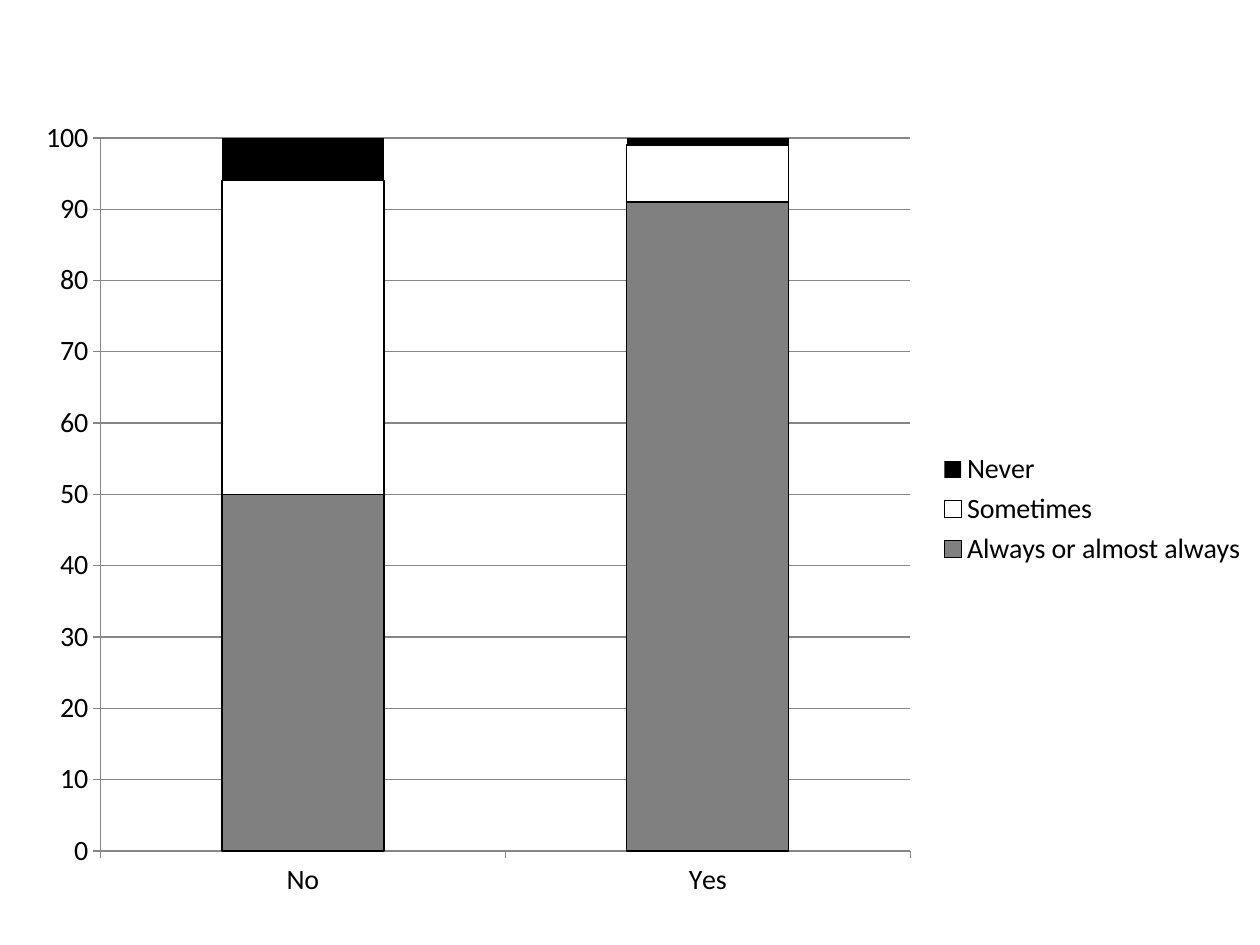
"""Build a slide with a stacked column chart of answer frequencies."""
from dataclasses import dataclass

from pptx import Presentation
from pptx.chart.data import CategoryChartData
from pptx.dml.color import RGBColor
from pptx.enum.chart import XL_CHART_TYPE as ChartType
from pptx.enum.chart import XL_LEGEND_POSITION as LegendPosition
from pptx.enum.chart import XL_TICK_MARK as TickMark
from pptx.util import Cm, Pt


@dataclass(frozen=True)
class Theme:
    font: str = "Calibri"
    text: RGBColor = RGBColor(0x00, 0x00, 0x00)
    grid: RGBColor = RGBColor(0x86, 0x86, 0x86)
    outline: RGBColor = RGBColor(0x00, 0x00, 0x00)
    always: RGBColor = RGBColor(0x80, 0x80, 0x80)
    sometimes: RGBColor = RGBColor(0xFF, 0xFF, 0xFF)
    never: RGBColor = RGBColor(0x00, 0x00, 0x00)
    text_size: Pt = Pt(16)
    line_width: Pt = Pt(0.75)


theme = Theme()
answers = [
    ("Always or almost always", (50, 91), theme.always, True),
    ("Sometimes", (44, 8), theme.sometimes, True),
    ("Never", (6, 1), theme.never, False),
]

presentation = Presentation()
presentation.slide_width = Cm(25.4)
presentation.slide_height = Cm(19.05)
slide = presentation.slides.add_slide(presentation.slide_layouts[6])

chart_data = CategoryChartData()
chart_data.categories = ["No", "Yes"]
for name, values, color, outlined in answers:
    chart_data.add_series(name, values)

chart = slide.shapes.add_chart(
    ChartType.COLUMN_STACKED, Cm(0.43), Cm(2.11), Cm(24.97), Cm(16.31), chart_data
).chart
chart.has_title = False
chart.font.name = theme.font
chart.font.size = theme.text_size
chart.font.color.rgb = theme.text

plot = chart.plots[0]
plot.gap_width = 150
plot.overlap = 100
plot.vary_by_categories = False
for series, (name, values, color, outlined) in zip(plot.series, answers):
    series.format.fill.solid()
    series.format.fill.fore_color.rgb = color
    if outlined:
        series.format.line.color.rgb = theme.outline
        series.format.line.width = theme.line_width
    else:
        series.format.line.fill.background()

value_axis = chart.value_axis
value_axis.minimum_scale = 0
value_axis.maximum_scale = 100
value_axis.major_unit = 10
value_axis.has_major_gridlines = True
for axis in (chart.category_axis, value_axis):
    axis.major_tick_mark = TickMark.OUTSIDE
    axis.minor_tick_mark = TickMark.NONE
    axis.tick_labels.font.size = theme.text_size
for line_owner in (chart.category_axis, value_axis, value_axis.major_gridlines):
    line_owner.format.line.color.rgb = theme.grid
    line_owner.format.line.width = theme.line_width

chart.has_legend = True
chart.legend.position = LegendPosition.RIGHT
chart.legend.include_in_layout = False
chart.legend.font.size = theme.text_size

presentation.save("out.pptx")
